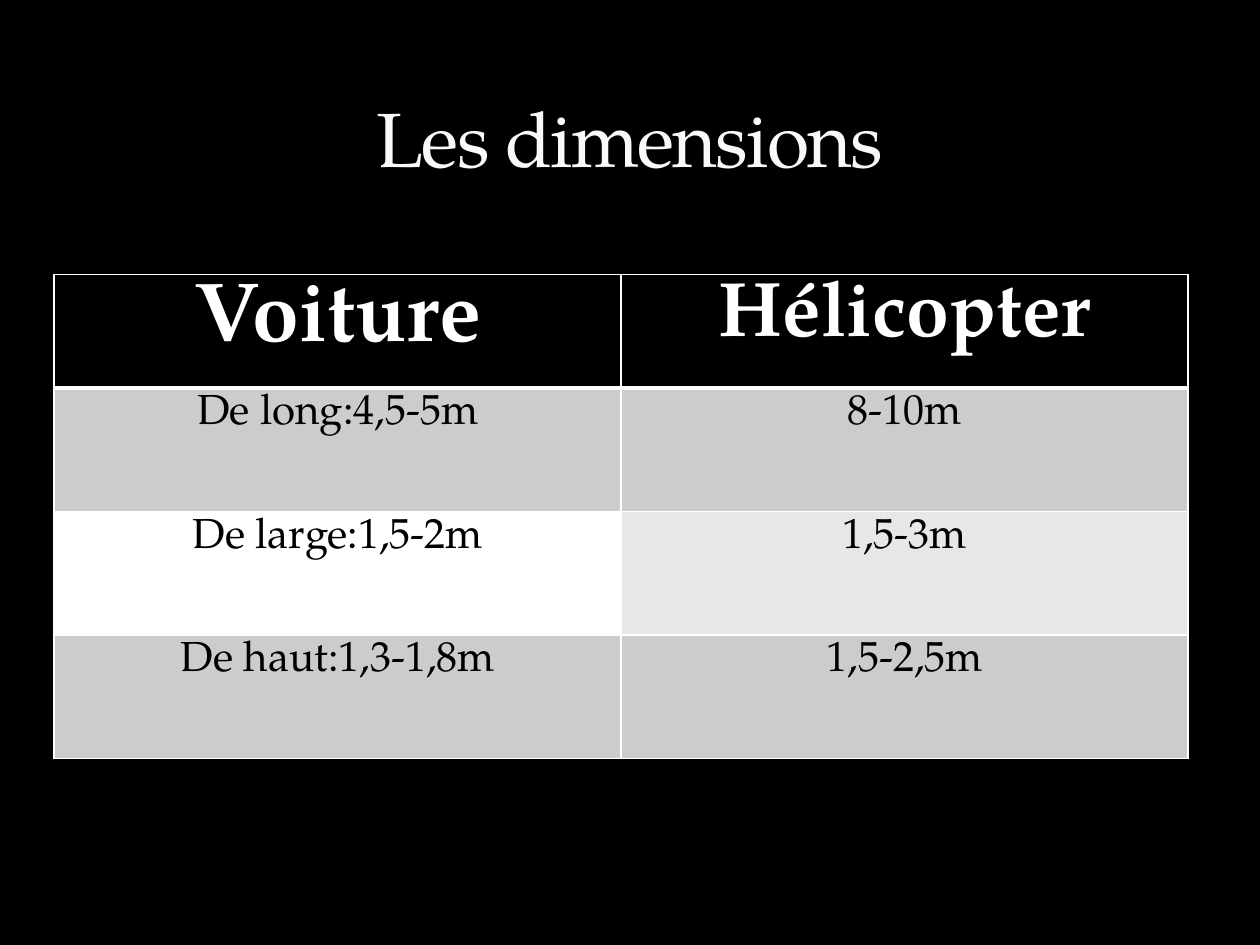
"""Build a slide that compares the dimensions of a car and a helicopter."""
from lxml import etree
from pptx import Presentation
from pptx import util as u
from pptx.dml.color import RGBColor
from pptx.enum import text
from pptx.oxml import ns

FONT = "TeX Gyre Pagella"
HUES = {"black": "000000", "white": "FFFFFF", "title": "F9F9F9",
        "band": "CCCCCC", "pale": "E7E7E7"}
HEADS = [("Voiture", 48), ("Hélicopter", 44)]
ROWS = [
    (("De long:4,5-5m", "band"), ("8-10m", "band")),
    (("De large:1,5-2m", "white"), ("1,5-3m", "pale")),
    (("De haut:1,3-1,8m", "band"), ("1,5-2,5m", "band")),
]


def paint(fill, hue):
    fill.solid()
    fill.fore_color.rgb = RGBColor.from_string(HUES[hue])


def write(frame, words, size, hue, bold=False, space=0):
    par = frame.paragraphs[0]
    par.alignment = text.PP_ALIGN.CENTER
    run = par.add_run()
    run.text = words
    font = run.font
    font.name, font.size, font.bold = FONT, u.Pt(size), bold
    font.color.rgb = RGBColor.from_string(HUES[hue])
    if space:
        run._r.get_or_add_rPr().set("spc", str(space * 100))


def edge(cell, side, width):
    line = etree.SubElement(cell._tc.get_or_add_tcPr(), ns.qn(f"a:ln{side}"),
                            w=str(u.Pt(width)))
    fill = etree.SubElement(line, ns.qn("a:solidFill"))
    etree.SubElement(fill, ns.qn("a:srgbClr"), val=HUES["white"])


def fill_cell(cell, words, size, hue, back, bold=False, top=1, base=1):
    for side, width in (("L", 1), ("R", 1), ("T", top), ("B", base)):
        edge(cell, side, width)
    paint(cell.fill, back)
    write(cell.text_frame, words, size, hue, bold=bold)


def add_title(slide):
    box = slide.shapes.add_textbox(u.Inches(0.5), u.Inches(0.17),
                                   u.Inches(9), u.Inches(1.33))
    frame = box.text_frame
    frame.word_wrap = True
    frame.vertical_anchor = text.MSO_ANCHOR.BOTTOM
    write(frame, "Les dimensions", 44, "title", space=-1)


def add_grid(slide):
    grid = slide.shapes.add_table(len(ROWS) + 1, len(HEADS), u.Inches(0.43),
                                  u.Inches(2.18), u.Inches(9), u.Inches(3.81)).table
    for i, row in enumerate(grid.rows):
        row.height = u.Inches(0.98 if i else 0.87)
    for col, (words, size) in enumerate(HEADS):
        fill_cell(grid.cell(0, col), words, size, "white", "black", bold=True, base=3)
    for i, row in enumerate(ROWS, 1):
        for col, (words, back) in enumerate(row):
            fill_cell(grid.cell(i, col), words, 24, "black", back,
                      top=3 if i == 1 else 1)


def main():
    deck = Presentation()
    deck.slide_width, deck.slide_height = u.Inches(10), u.Inches(7.5)
    slide = deck.slides.add_slide(deck.slide_layouts[6])
    paint(slide.background.fill, "black")
    add_title(slide)
    add_grid(slide)
    deck.save("out.pptx")


if __name__ == "__main__":
    main()
